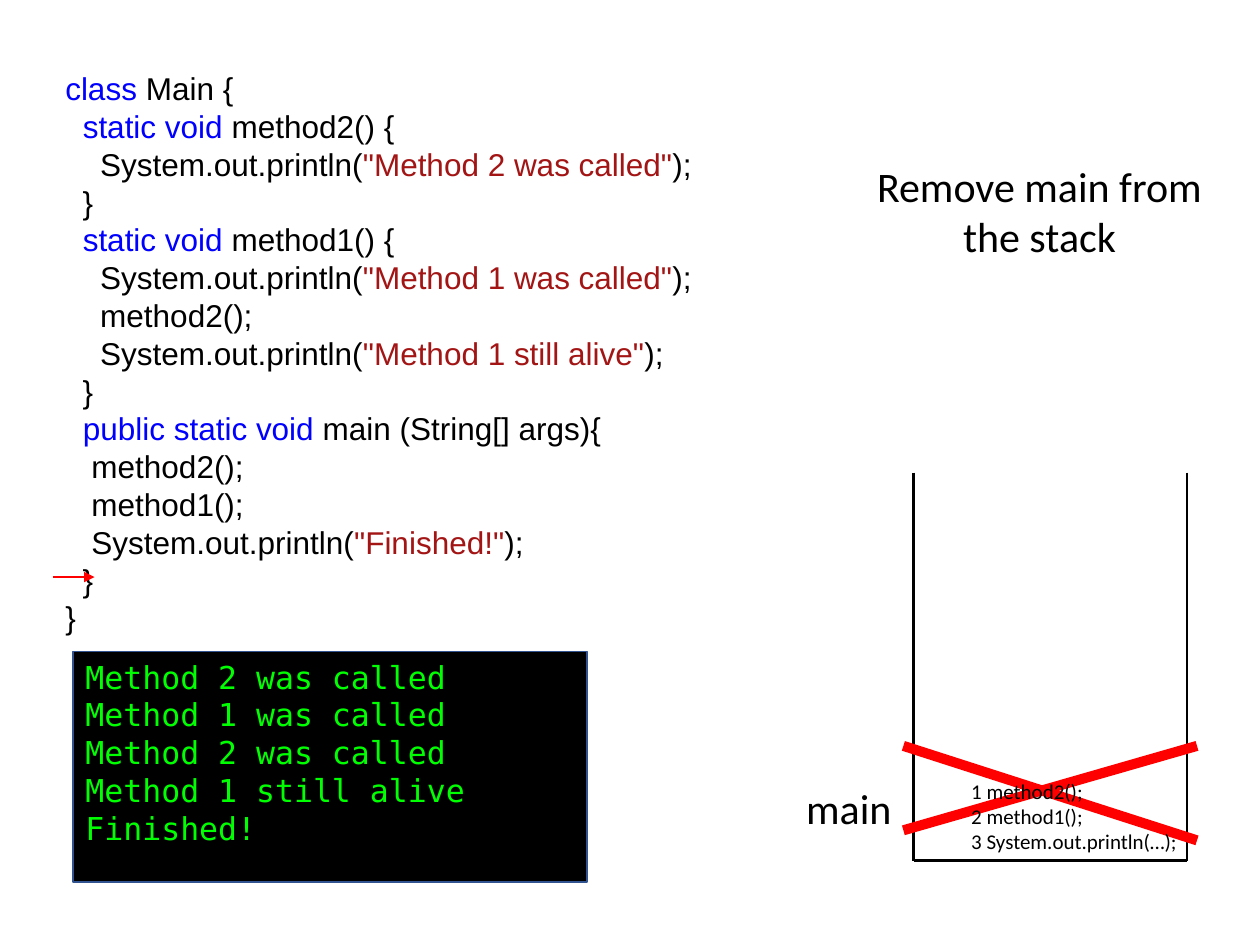
from dataclasses import dataclass

from lxml import etree
from pptx import Presentation
from pptx.dml.color import RGBColor
from pptx.enum.shapes import MSO_CONNECTOR, MSO_SHAPE
from pptx.enum.text import MSO_ANCHOR, MSO_AUTO_SIZE, PP_ALIGN
from pptx.oxml.ns import qn
from pptx.util import Inches, Pt

STRAIGHT = MSO_CONNECTOR.STRAIGHT
RECTANGLE = MSO_SHAPE.RECTANGLE
TOP = MSO_ANCHOR.TOP
NO_FIT = MSO_AUTO_SIZE.NONE
LEFT, CENTER = PP_ALIGN.LEFT, PP_ALIGN.CENTER
TITLE_ONLY = 5


@dataclass(frozen=True)
class Theme:
    """Colours, fonts and type sizes of the slide."""

    ink: str = "000000"
    keyword: str = "0000FF"
    string: str = "A31515"
    accent: str = "FF0000"
    output: str = "00FF00"
    console: str = "000000"
    console_edge: str = "31538F"
    code_font: str = "Arial"
    label_font: str = "Calibri"
    console_font: str = "DejaVu Sans Mono"
    label_size: int = 24
    code_size: int = 18
    frame_size: int = 12


THEME = Theme()

KEYWORDS = ("class", "public static void", "static void")

CODE = """class Main {
  static void method2() {
    System.out.println("Method 2 was called");
  }
  static void method1() {
    System.out.println("Method 1 was called");
    method2();
    System.out.println("Method 1 still alive");
  }
  public static void main (String[] args){
   method2();
   method1();
   System.out.println("Finished!");
  }
}"""

OUTPUT = """Method 2 was called
Method 1 was called
Method 2 was called
Method 1 still alive
Finished!"""

FRAME = """1 method2();
2 method1();
3 System.out.println(…);"""


def code_spans(line):
    """Split a line of code into coloured spans."""
    for keyword in KEYWORDS:
        if line.lstrip().startswith(keyword):
            indent, word, rest = line.partition(keyword)
            spans = [(indent, THEME.ink), (word, THEME.keyword), (rest, THEME.ink)]
            return [span for span in spans if span[0]]
    if '"' in line:
        before, quoted, after = line.split('"')
        return [(before, THEME.ink), (f'"{quoted}"', THEME.string), (after, THEME.ink)]
    return [(line, THEME.ink)]


def write_text(shape, text, font=THEME.label_font, size=THEME.label_size,
               color=THEME.ink, align=LEFT, is_code=False):
    """Fill a shape with one paragraph for each line of the text."""
    frame = shape.text_frame
    frame.word_wrap = True
    frame.auto_size = NO_FIT
    frame.vertical_anchor = TOP
    for index, line in enumerate(text.split("\n")):
        para = frame.paragraphs[0] if index == 0 else frame.add_paragraph()
        para.alignment = align
        para.line_spacing = 1.0
        para.space_before = Pt(0)
        for words, span_color in code_spans(line) if is_code else [(line, color)]:
            span = para.add_run()
            span.text = words
            span.font.name = font
            span.font.size = Pt(size)
            span.font.color.rgb = RGBColor.from_string(span_color)


def add_label(page, area, text, **style):
    """Add a text box with formatted text."""
    box = page.shapes.add_textbox(*map(Inches, area))
    write_text(box, text, **style)


def add_title(page, area, text):
    """Move the title placeholder and write its text."""
    title = page.shapes.title
    title.left, title.top, title.width, title.height = map(Inches, area)
    write_text(title, text, align=CENTER)


def add_console(page, area, text):
    """Add the dark panel that shows the program output."""
    panel = page.shapes.add_shape(RECTANGLE, *map(Inches, area))
    panel.shadow.inherit = False
    panel.fill.solid()
    panel.fill.fore_color.rgb = RGBColor.from_string(THEME.console)
    panel.line.color.rgb = RGBColor.from_string(THEME.console_edge)
    panel.line.width = Pt(1)
    write_text(panel, text, font=THEME.console_font, size=THEME.code_size,
               color=THEME.output)


def add_line(page, start, end, color=THEME.ink, width=1.5, arrow=False):
    """Add a straight line, with an arrowhead at its end if asked."""
    line = page.shapes.add_connector(STRAIGHT, *map(Inches, (*start, *end)))
    line.line.color.rgb = RGBColor.from_string(color)
    line.line.width = Pt(width)
    properties = line.line._get_or_add_ln()
    if arrow:
        etree.SubElement(properties, qn("a:tailEnd"), type="triangle")
    etree.SubElement(line._element.spPr, qn("a:effectLst"))


def add_stack(page, left, top, right, bottom):
    """Draw the open-topped container of the call stack."""
    for side in (left, right):
        add_line(page, (side, top), (side, bottom))
    add_line(page, (left, bottom), (right, bottom))


def add_cross(page, left, right, top):
    """Cross out a stack frame with two thick lines."""
    for start, end in ((top, 6.67), (6.59, top)):
        add_line(page, (left, start), (right, end), color=THEME.accent, width=5.75)


def main():
    """Build the slide and save it."""
    deck = Presentation()
    deck.slide_width, deck.slide_height = Inches(10), Inches(7.5)
    page = deck.slides.add_slide(deck.slide_layouts[TITLE_ONLY])
    add_title(page, (6.85, 1.22, 2.8, 0.91), "Remove main from the stack")
    add_label(page, (0.42, 0.5, 7.67, 4.65), CODE, font=THEME.code_font,
              size=THEME.code_size, is_code=True)
    add_line(page, (0.42, 4.58), (0.75, 4.58), color=THEME.accent, width=1.25,
             arrow=True)
    add_stack(page, 7.25, 3.75, 9.42, 6.83)
    add_label(page, (6.3, 6.16, 0.89, 0.5), "main")
    add_console(page, (0.58, 5.17, 4.08, 1.83), OUTPUT)
    add_cross(page, 7.17, 9.5, 5.92)
    add_label(page, (7.61, 6.13, 1.98, 0.71), FRAME, size=THEME.frame_size)
    deck.save("out.pptx")


if __name__ == "__main__":
    main()
